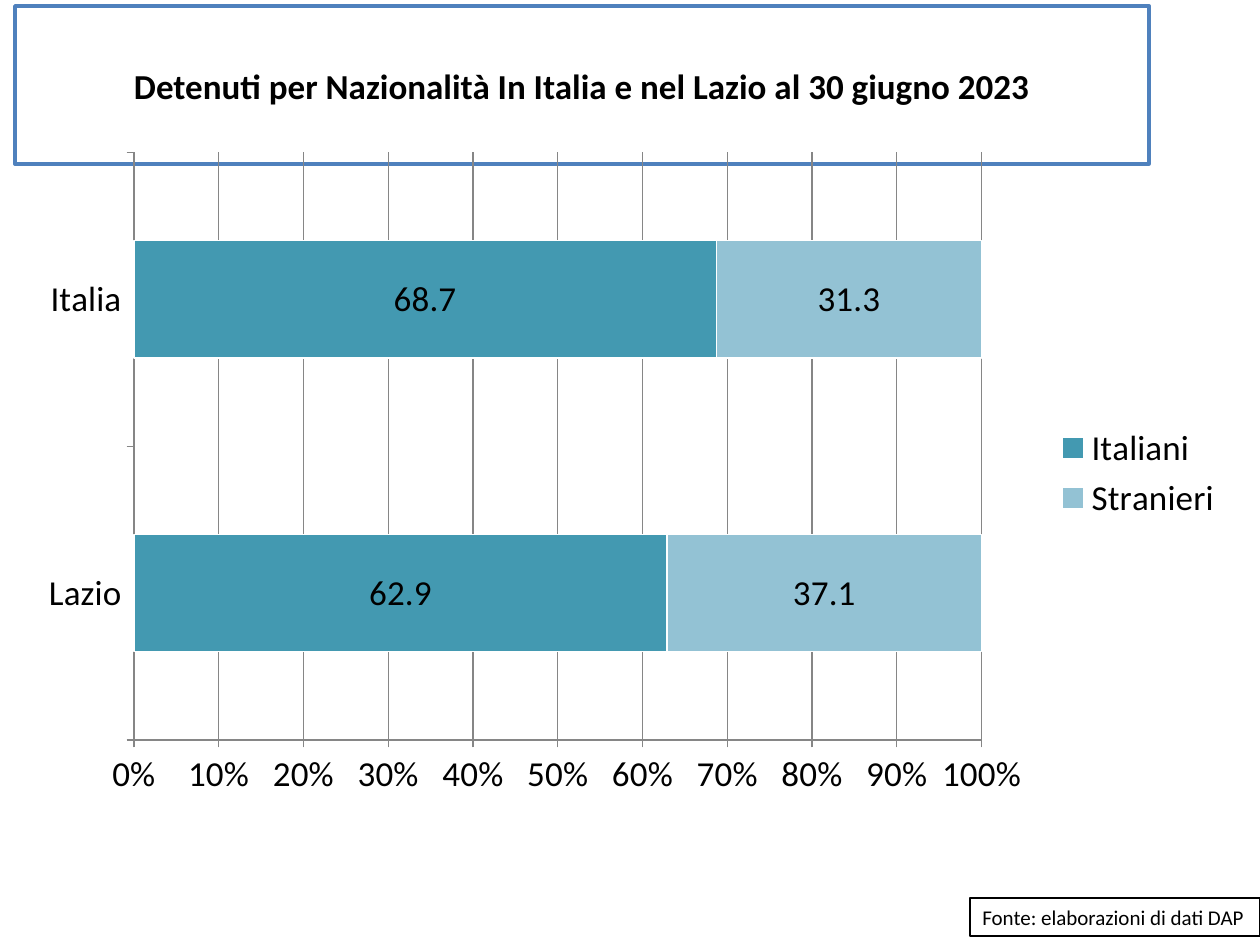
from lxml.etree import SubElement
from pptx import Presentation
from pptx.chart.data import CategoryChartData
from pptx.dml.color import RGBColor
from pptx.enum.chart import XL_CHART_TYPE, XL_LABEL_POSITION, XL_LEGEND_POSITION, XL_TICK_MARK
from pptx.enum.text import MSO_ANCHOR, PP_ALIGN
from pptx.oxml.ns import qn
from pptx.util import Pt

SCALE = 914400 / 126
FONT = "Calibri"
BLACK, WHITE, GRAY = "000000", "FFFFFF", "868686"
SERIES = [
    ("Italiani", (62.9, 68.7), "4399B1"),
    ("Stranieri", (37.1, 31.3), "93C2D4"),
]


def px(num):
    return round(num * SCALE)


def tint(code):
    return RGBColor.from_string(code)


def style(font, size=20, color=BLACK, bold=False):
    font.name = FONT
    font.size = Pt(size)
    font.bold = bold
    font.color.rgb = tint(color)


def fill(part, code):
    part.fill.solid()
    part.fill.fore_color.rgb = tint(code)


def edge(line, code, width):
    line.color.rgb = tint(code)
    line.width = Pt(width)


def place(shape, box):
    shape.left, shape.top, shape.width, shape.height = map(px, box)


def write(shape, text, align=PP_ALIGN.LEFT, anchor=MSO_ANCHOR.TOP, wrap=True, **form):
    frame = shape.text_frame
    frame.word_wrap = wrap
    frame.vertical_anchor = anchor
    para = frame.paragraphs[0]
    para.alignment = align
    run = para.add_run()
    run.text = text
    style(run.font, **form)


def add_title(slide, box):
    title = slide.shapes.title
    place(title, box)
    fill(title, WHITE)
    edge(title.line, "4F81BD", 2)
    write(title, "Detenuti per Nazionalità In Italia e nel Lazio al 30 giugno 2023",
          align=PP_ALIGN.CENTER, anchor=MSO_ANCHOR.MIDDLE, bold=True)


def add_source(slide, box):
    note = slide.shapes.add_textbox(*map(px, box))
    fill(note, WHITE)
    edge(note.line, BLACK, 0.75)
    write(note, "Fonte: elaborazioni di dati DAP", wrap=False, size=12)


def set_plot(chart, **part):
    area = chart.plots[0]._element.getparent()
    for old in area.findall(qn("c:layout")):
        area.remove(old)
    layout = SubElement(area, qn("c:layout"))
    area.insert(0, layout)
    manual = SubElement(layout, qn("c:manualLayout"))
    modes = {"layoutTarget": "inner", "xMode": "edge", "yMode": "edge"}
    for tag, val in {**modes, **part}.items():
        SubElement(manual, qn("c:" + tag)).set("val", str(val))


def add_bars(slide, box):
    data = CategoryChartData(number_format="0.0")
    data.categories = ["Lazio", "Italia"]
    for name, vals, _ in SERIES:
        data.add_series(name, vals)
    frame = slide.shapes.add_chart(XL_CHART_TYPE.BAR_STACKED_100, *map(px, box), data)
    chart = frame.chart
    style(chart.font)
    chart.has_title = False
    chart.has_legend = True
    chart.legend.position = XL_LEGEND_POSITION.RIGHT
    chart.legend.include_in_layout = False

    plot = chart.plots[0]
    plot.vary_by_categories = False
    plot.gap_width = 150
    plot.overlap = 100
    for bar, (_, _, code) in zip(plot.series, SERIES):
        fill(bar.format, code)
        edge(bar.format.line, WHITE, 0.75)
        label = bar.data_labels
        label.show_value = True
        label.position = XL_LABEL_POSITION.CENTER
        label.number_format = "0.0"
        label.number_format_is_linked = False
        style(label.font)

    for axis in (chart.category_axis, chart.value_axis):
        axis.major_tick_mark = XL_TICK_MARK.OUTSIDE
        axis.minor_tick_mark = XL_TICK_MARK.NONE
        edge(axis.format.line, GRAY, 0.75)
        style(axis.tick_labels.font)
    scale = chart.value_axis
    scale.minimum_scale = 0
    scale.maximum_scale = 1
    scale.major_unit = 0.1
    scale.has_major_gridlines = True
    edge(scale.major_gridlines.format.line, GRAY, 0.75)
    scale.tick_labels.number_format = "0%"
    scale.tick_labels.number_format_is_linked = False
    set_plot(chart, x=0.09, y=0.02, w=0.7, h=0.88)


def main():
    deck = Presentation()
    deck.slide_width, deck.slide_height = px(1260), px(945)
    slide = deck.slides.add_slide(deck.slide_layouts[5])
    fill(slide.background, WHITE)
    add_title(slide, (15, 6, 1134, 158))
    add_source(slide, (970, 898, 290, 38))
    add_bars(slide, (25, 139, 1211, 668))
    deck.save("out.pptx")


if __name__ == "__main__":
    main()
